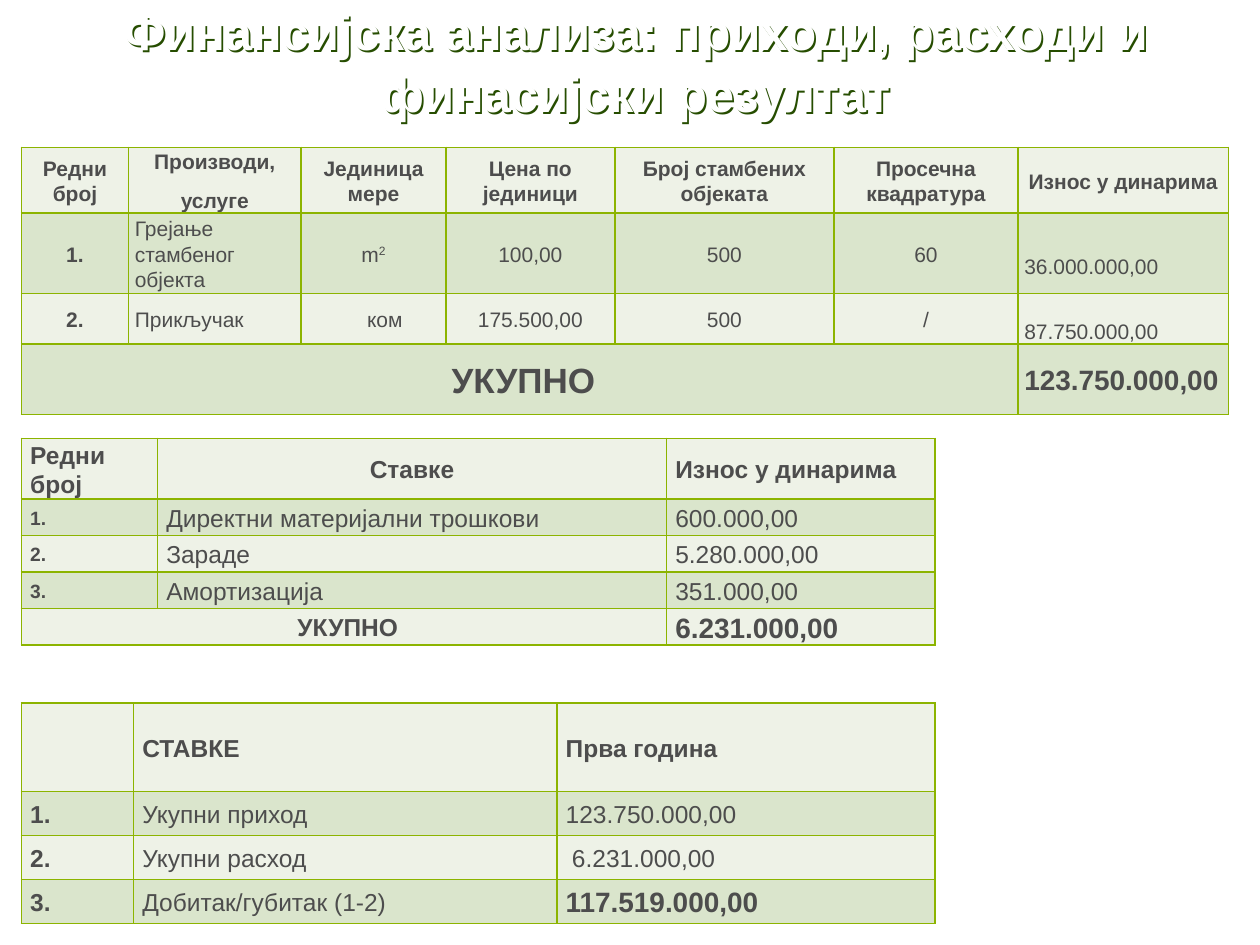
from lxml import etree
from pptx import Presentation
from pptx.dml.color import RGBColor
from pptx.enum import text
from pptx.oxml import parse_xml
from pptx.oxml.ns import nsdecls, qn
from pptx.util import Inches, Pt

COLORS = {"text": "4D4D4D", "border": "8CB400", "light": "EEF2E7",
          "dark": "DAE5CC", "title": "FFFFFF", "shadow": "264D00"}
LEFT = 0.17
CENTER, START = text.PP_ALIGN.CENTER, text.PP_ALIGN.LEFT


def add_run(paragraph, words, size, bold, color, superscript=False):
    run = paragraph.add_run()
    run.text = words
    run.font.name = "Arial"
    run.font.size = Pt(size)
    run.font.bold = bold
    run.font.color.rgb = RGBColor.from_string(COLORS[color])
    if superscript:
        run.font._element.set("baseline", "30000")


def write(frame, words, size=12, bold=False, align=START, color="text",
          spacing=1.07, after=8):
    """Fill a text frame; a newline starts a paragraph, ^ a superscript."""
    for index, line in enumerate(words.split("\n")):
        paragraph = frame.add_paragraph() if index else frame.paragraphs[0]
        paragraph.alignment = align
        paragraph.line_spacing = spacing
        paragraph.space_after = Pt(after)
        for part, piece in enumerate(line.split("^")):
            add_run(paragraph, piece, size, bold, color, part > 0)


def set_borders(cell):
    properties = cell._tc.get_or_add_tcPr()
    for index, side in enumerate(("lnL", "lnR", "lnT", "lnB")):
        properties.insert(index, parse_xml(
            f'<a:{side} {nsdecls("a")} w="12700"><a:solidFill>'
            f'<a:srgbClr val="{COLORS["border"]}"/></a:solidFill></a:{side}>'))


def add_table(slide, top, widths, heights, rows, style, inset, total_span=0):
    """Draw a banded table; style(row, column) gives each cell's format."""
    frame = slide.shapes.add_table(
        len(rows), len(widths), Inches(LEFT), Inches(top),
        Inches(sum(widths)), Inches(sum(heights)))
    table = frame.table
    for column, width in zip(table.columns, widths):
        column.width = Inches(width)
    for row, height in zip(table.rows, heights):
        row.height = Inches(height)
    for r, row in enumerate(rows):
        for c, words in enumerate(row):
            cell = table.cell(r, c)
            cell.fill.solid()
            shade = COLORS["dark" if r % 2 else "light"]
            cell.fill.fore_color.rgb = RGBColor.from_string(shade)
            set_borders(cell)
            cell.vertical_anchor = text.MSO_ANCHOR.MIDDLE
            options = style(r, c)
            cell.margin_left = Inches(inset + options.pop("indent", 0))
            cell.margin_right = Inches(inset)
            cell.margin_top = Inches(options.pop("drop", 0.01))
            cell.margin_bottom = 0
            if words:
                write(cell.text_frame, words, **options)
    if total_span:
        last = len(rows) - 1
        table.cell(last, 0).merge(table.cell(last, total_span - 1))


def total_style(is_amount, label_size):
    if is_amount:
        return dict(size=16, bold=True)
    return dict(size=label_size, bold=True, align=CENTER, indent=0.06)


def income_style(row, column):
    if row == 3:
        return total_style(column == 6, 20)
    options = dict(bold=row == 0 or column == 0, align=CENTER)
    if row and column in (1, 6):
        options["align"] = START
    if row and column == 6:
        options["drop"] = 0.2
    if (row, column) == (2, 2):
        options["indent"] = 0.18
    return options


def cost_style(row, column):
    if row == 4:
        return total_style(column == 2, 14)
    return dict(size=11 if row and column == 0 else 14,
                bold=row == 0 or column == 0,
                align=CENTER if (row, column) == (0, 1) else START)


def result_style(row, column):
    total = (row, column) == (3, 2)
    return dict(size=16 if total else 14,
                bold=row == 0 or column == 0 or total,
                indent=0.05 if (row, column) == (2, 2) else 0)


def add_title(slide, words):
    title = slide.shapes.title
    title.left, title.top = Inches(LEFT), Inches(0.21)
    title.width, title.height = Inches(9.75), Inches(0.54)
    title.fill.background()
    frame = title.text_frame
    frame.word_wrap = True
    frame.auto_size = text.MSO_AUTO_SIZE.NONE
    frame.vertical_anchor = text.MSO_ANCHOR.MIDDLE
    write(frame, words, size=28, bold=True, align=CENTER, color="title",
          spacing=1.05, after=0)
    # On an unfilled shape the dark green shadow falls from the letters
    title.shadow.inherit = False
    effects = title._element.spPr.find(qn("a:effectLst"))
    shadow = etree.SubElement(effects, qn("a:outerShdw"), dist="17961",
                              dir="2700000", algn="ctr", rotWithShape="0")
    etree.SubElement(shadow, qn("a:srgbClr"), val=COLORS["shadow"])


def main():
    presentation = Presentation()
    presentation.slide_width, presentation.slide_height = Inches(10), Inches(7.5)
    slide = presentation.slides.add_slide(presentation.slide_layouts[5])
    add_title(slide, "Финансијска анализа: приходи, расходи и финасијски резултат")

    # Income
    add_table(slide, 1.17, [0.85, 1.37, 1.15, 1.34, 1.74, 1.46, 1.67],
              [0.52, 0.64, 0.4, 0.56], [
        ["Редни број", "Производи,\nуслуге", "Јединица мере", "Цена по јединици",
         "Број стамбених објеката", "Просечна квадратура", "Износ у динарима"],
        ["1.", "Грејање стамбеног објекта", "m^2", "100,00", "500", "60",
         "36.000.000,00"],
        ["2.", "Прикључак", "ком", "175.500,00", "500", "/", "87.750.000,00"],
        ["УКУПНО", "", "", "", "", "", "123.750.000,00"],
    ], income_style, inset=0.05, total_span=6)

    # Costs
    add_table(slide, 3.48, [1.08, 4.04, 2.13], [0.48] + [0.29] * 4, [
        ["Редни број", "Ставке", "Износ у динарима"],
        ["1.", "Директни материјални трошкови", "600.000,00"],
        ["2.", "Зараде", "5.280.000,00"],
        ["3.", "Амортизација", "351.000,00"],
        ["УКУПНО", "", "6.231.000,00"],
    ], cost_style, inset=0.07, total_span=2)

    # Result
    add_table(slide, 5.58, [0.89, 3.36, 3], [0.7] + [0.35] * 3, [
        ["", "СТАВКЕ", "Прва година"],
        ["1.", "Укупни приход", "123.750.000,00"],
        ["2.", "Укупни расход", "6.231.000,00"],
        ["3.", "Добитак/губитак (1-2)", "117.519.000,00"],
    ], result_style, inset=0.07)

    presentation.save("out.pptx")


if __name__ == "__main__":
    main()
